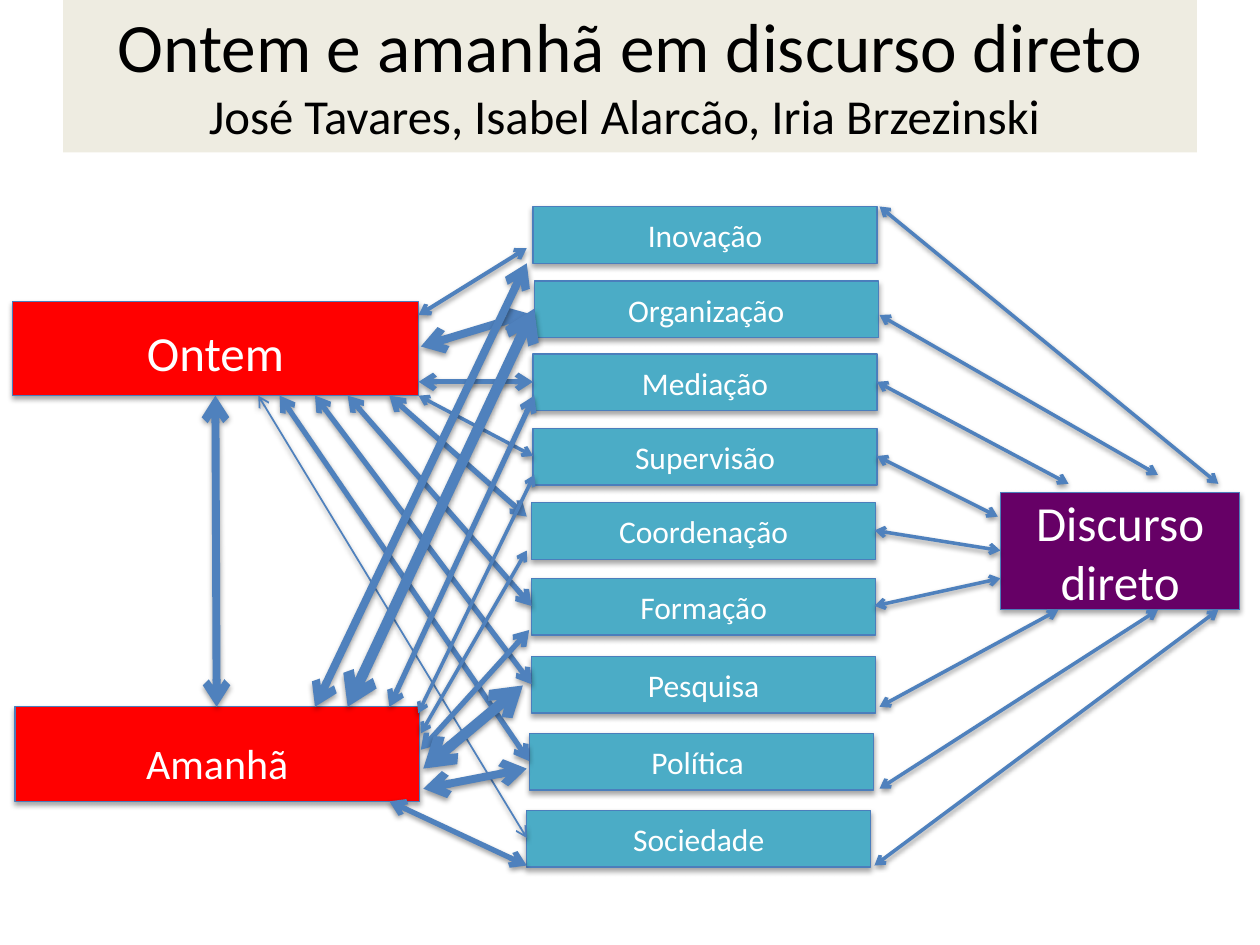
from lxml import etree
from pptx import Presentation
from pptx.dml.color import RGBColor
from pptx.enum.shapes import MSO_CONNECTOR, MSO_SHAPE
from pptx.enum.text import MSO_ANCHOR, MSO_AUTO_SIZE, PP_ALIGN
from pptx.oxml.ns import qn
from pptx.util import Pt

RECTANGLE = MSO_SHAPE.RECTANGLE
STRAIGHT = MSO_CONNECTOR.STRAIGHT
MIDDLE = MSO_ANCHOR.MIDDLE
CENTER = PP_ALIGN.CENTER
NO_AUTOFIT = MSO_AUTO_SIZE.NONE

BLACK = RGBColor(0x00, 0x00, 0x00)
WHITE = RGBColor(0xFF, 0xFF, 0xFF)
CREAM = RGBColor(0xEE, 0xEC, 0xE1)
RED = RGBColor(0xFF, 0x00, 0x00)
PURPLE = RGBColor(0x66, 0x00, 0x66)
TEAL = RGBColor(0x4B, 0xAC, 0xC6)
BORDER = RGBColor(0x4B, 0x7E, 0xBC)
ARROW = RGBColor(0x4F, 0x81, 0xBD)
FONT = "Calibri"

TITLE_BOX = (36, -2.9, 648, 90)
YESTERDAY_BOX = (7.2, 172.1, 231.8, 54)
TOMORROW_BOX = (8.6, 403.9, 231.1, 54)
SPEECH_BOX = (571.7, 281.5, 136.8, 67)
THEMES_BOX = (301, 118, 196.6, 32.4)

# Name, left offset and top offset of each theme.
THEMES = [
    ("Inovação", 3.6, 0),
    ("Organização", 4.3, 42.6),
    ("Mediação", 3.6, 84.3),
    ("Supervisão", 3.6, 126.8),
    ("Coordenação", 2.8, 169.3),
    ("Formação", 2.8, 212.5),
    ("Pesquisa", 2.8, 257.1),
    ("Política ", 1.4, 301),
    ("Sociedade", 0, 345),
]

# One link per theme: point in the hub box, point in the theme box, width.
YESTERDAY_LINKS = [
    (232, 8, -3.6, 23.8, 2.25),
    (233.3, 25.9, -2.9, 18.7, 4.5),
    (232, 46.1, 0, 15.9, 3),
    (232, 54, 0, 15.8, 2),
    (215.3, 54, -2.8, 7.9, 3),
    (191.5, 54, 0, 15.8, 3),
    (172.8, 54, 0, 15.9, 3),
    (152.6, 54, 0, 15.9, 3),
    (140.4, 54, 0, 15.8, 1),
]
TOMORROW_LINKS = [
    (171.4, 0, -3.6, 32.5, 4.5),
    (190.1, 0, 0, 15.8, 6),
    (213.9, 0, 0.7, 23.8, 3),
    (230.4, 3.6, 0.7, 26.6, 2),
    (231.9, 15.1, -2.8, 27.3, 2),
    (231.9, 24.5, -1.4, 29.5, 3),
    (233.3, 35.3, -5, 16.6, 6),
    (233.3, 46.8, -1.4, 20.2, 4.5),
    (213.9, 54, 0, 31.6, 3),
]
SPEECH_LINKS = [
    (124.5, -5, 198, 0, 2),
    (90, -10.1, 197.3, 19.4, 2),
    (38.9, -5, 196.5, 15.9, 2),
    (-1.5, 13.7, 196.5, 15.8, 2),
    (0, 33.1, 195.9, 15.8, 2),
    (0, 49, 195.9, 15.8, 2),
    (33.1, 67, 198.8, 28.8, 2),
    (90, 67, 200.2, 31.7, 2),
    (124.5, 67, 198.7, 31.6, 2),
]


def add_span(para, text, size, color):
    """Append one formatted run to a paragraph."""
    span = para.add_run()
    span.text = text
    span.font.name = FONT
    span.font.size = Pt(size)
    span.font.color.rgb = color


def add_shadow(shape, distance, opacity):
    """Give a shape or connector a soft shadow straight below it."""
    effects = etree.SubElement(shape._element.spPr, qn("a:effectLst"))
    shadow = etree.SubElement(
        effects, qn("a:outerShdw"), blurRad=str(Pt(3.1)),
        dist=str(Pt(distance)), dir="5400000", rotWithShape="0")
    color = etree.SubElement(shadow, qn("a:srgbClr"), val=str(BLACK))
    etree.SubElement(color, qn("a:alpha"), val=str(opacity * 1000))


def add_title(page, box):
    """Format the title placeholder with the heading and its authors."""
    title = page.shapes.title
    title.left, title.top, title.width, title.height = map(Pt, box)
    title.fill.solid()
    title.fill.fore_color.rgb = CREAM
    frame = title.text_frame
    frame.auto_size = NO_AUTOFIT
    frame.vertical_anchor = MIDDLE
    para = frame.paragraphs[0]
    para.alignment = CENTER
    add_span(para, "Ontem e amanhã em discurso direto", 39.6, BLACK)
    para.add_line_break()
    add_span(para, "José Tavares, Isabel Alarcão, Iria Brzezinski ", 27.9, BLACK)


def add_label_box(page, box, text, size, fill, drop=0):
    """Draw a filled box whose centred label may sit lower by drop."""
    shape = page.shapes.add_shape(RECTANGLE, *map(Pt, box))
    shape.fill.solid()
    shape.fill.fore_color.rgb = fill
    shape.line.color.rgb = BORDER
    shape.line.width = Pt(0.75)
    add_shadow(shape, 1.8, 35)
    frame = shape.text_frame
    frame.word_wrap = True
    frame.vertical_anchor = MIDDLE
    frame.margin_top = Pt(3.6 + 2 * drop)
    para = frame.paragraphs[0]
    para.alignment = CENTER
    add_span(para, text, size, WHITE)


def add_themes(page, box):
    """Stack the theme boxes and return their top-left corners."""
    left, top, width, height = box
    corners = []
    for name, shift, offset in THEMES:
        corner = (left + shift, top + offset)
        add_label_box(page, (*corner, width, height), name, 18, TEAL)
        corners.append(corner)
    return corners


def add_arrow(page, ends, width):
    """Draw a double-headed arrow between two points."""
    arrow = page.shapes.add_connector(STRAIGHT, *map(Pt, ends))
    arrow.line.color.rgb = ARROW
    arrow.line.width = Pt(width)
    line = arrow.line._get_or_add_ln()
    for tag in ("a:headEnd", "a:tailEnd"):
        etree.SubElement(line, qn(tag), type="arrow")
    add_shadow(arrow, 1.6, 38)


def add_fan(page, box, corners, links):
    """Link a hub box to every theme."""
    left, top = box[:2]
    for (theme_left, theme_top), link in zip(corners, links):
        hub_x, hub_y, theme_x, theme_y, width = link
        ends = (left + hub_x, top + hub_y, theme_left + theme_x, theme_top + theme_y)
        add_arrow(page, ends, width)


def main():
    """Build and save the slide."""
    deck = Presentation()
    deck.slide_width, deck.slide_height = Pt(720), Pt(540)
    page = deck.slides.add_slide(deck.slide_layouts[5])
    add_title(page, TITLE_BOX)
    add_label_box(page, YESTERDAY_BOX, "Ontem", 28, RED, 2)
    add_label_box(page, TOMORROW_BOX, "Amanhã", 24, RED, 5)
    add_label_box(page, SPEECH_BOX, "Discurso direto", 28, PURPLE)
    corners = add_themes(page, THEMES_BOX)
    add_arrow(page, (123.1, 226.1, 123.8, 403.9), 4.5)
    add_fan(page, SPEECH_BOX, corners, SPEECH_LINKS)
    add_fan(page, YESTERDAY_BOX, corners, YESTERDAY_LINKS)
    add_fan(page, TOMORROW_BOX, corners, TOMORROW_LINKS)
    deck.save("out.pptx")


if __name__ == "__main__":
    main()
